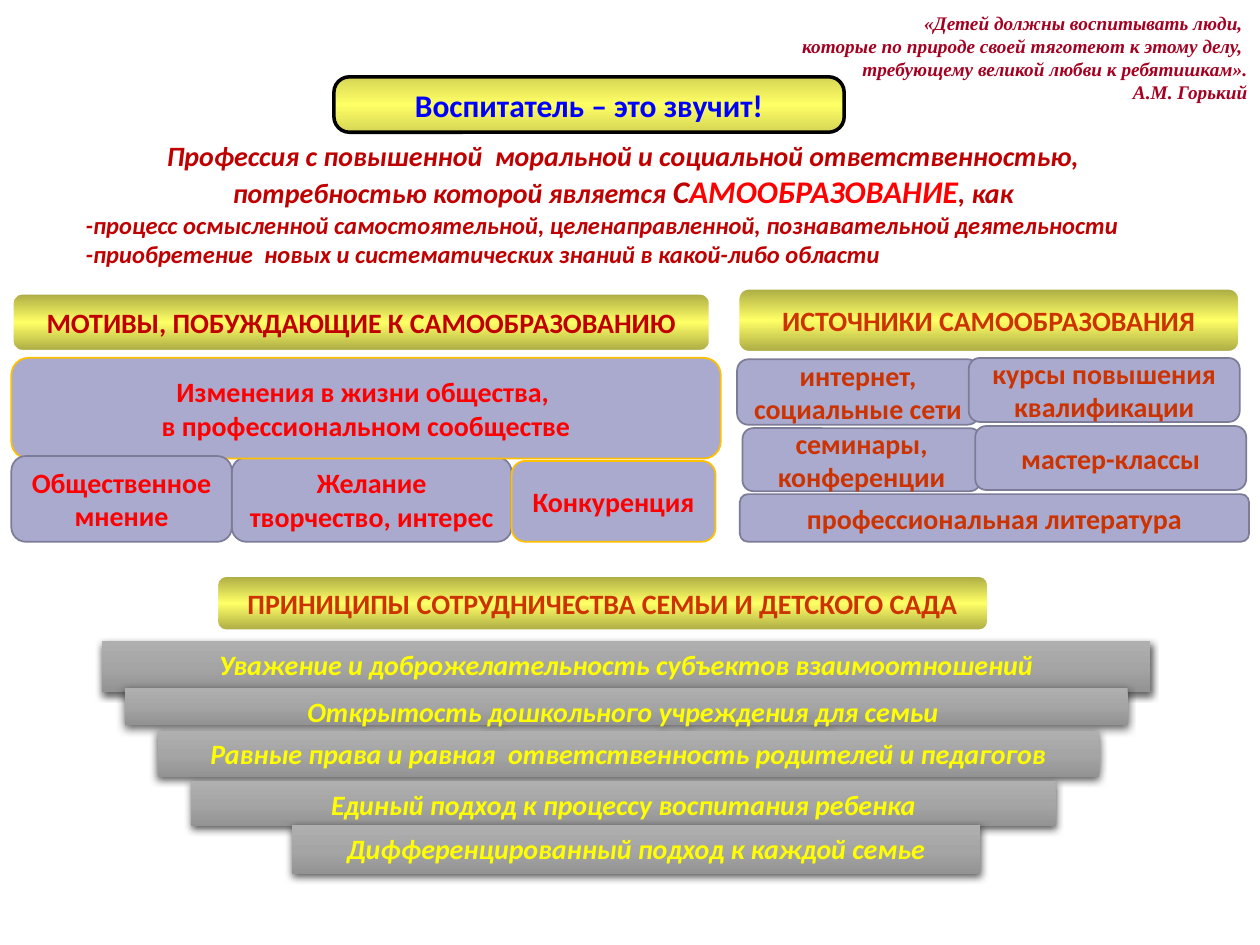
import copy
import dataclasses

import lxml.etree
import pptx
import pptx.dml.color
import pptx.enum.shapes
import pptx.enum.text
import pptx.oxml.ns
import pptx.util

Pt = pptx.util.Pt
Shape = pptx.enum.shapes.MSO_SHAPE
Align = pptx.enum.text.PP_ALIGN
Anchor = pptx.enum.text.MSO_ANCHOR
Fit = pptx.enum.text.MSO_AUTO_SIZE
qn = pptx.oxml.ns.qn


def rgb(code):
    return pptx.dml.color.RGBColor.from_string(code)


@dataclasses.dataclass(frozen=True)
class Theme:
    sans: str = "Calibri"
    serif: str = "Times New Roman"
    big: int = 18
    base: int = 16
    small: int = 14
    tiny: int = 11
    red: str = "FF0000"
    dark: str = "C00000"
    rust: str = "CC3300"
    wine: str = "A50021"
    blue: str = "0000FF"
    yellow: str = "FFFF00"
    black: str = "000000"
    white: str = "FFFFFF"
    lilac: str = "AAAACF"
    slate: str = "7C7C98"
    amber: str = "FFC000"
    gold: tuple = ("D5D555", "FFFF66", "D5D555")
    olive: tuple = ("A9A944", "FFFF66", "A9A944")
    grey: tuple = ("AFAFAF", "A5A5A5", "939393")


class Deck:
    def __init__(self, theme):
        self.theme = theme
        self.prs = pptx.Presentation()
        self.prs.slide_width, self.prs.slide_height = Pt(720), Pt(540)
        self.slide = self.prs.slides.add_slide(self.prs.slide_layouts[6])

    def run(self, para, text, color, size=None, font=None, italic=False):
        run = para.add_run()
        run.text = text
        face = run.font
        face.name = font or self.theme.sans
        face.size = Pt(size or self.theme.base)
        face.bold, face.italic = True, italic
        face.color.rgb = rgb(color)

    def lines(self, frame, rows, color, align=Align.CENTER, **style):
        """Write one paragraph for each row."""
        for i, row in enumerate(rows):
            para = frame.add_paragraph() if i else frame.paragraphs[0]
            para.alignment = align
            self.run(para, row, color, **style)

    def text(self, box):
        shape = self.slide.shapes.add_textbox(*map(Pt, box))
        shape.text_frame.word_wrap = True
        shape.text_frame.auto_size = Fit.SHAPE_TO_FIT_TEXT
        return shape.text_frame

    def blend(self, shape, colors):
        """Fill from top to bottom with evenly spaced colours."""
        fill = shape.fill
        fill.gradient()
        fill.gradient_angle = 270
        stops = next(shape.element.iter(qn("a:gsLst")))
        stops.insert(1, copy.deepcopy(stops[0]))
        for i, (stop, color) in enumerate(zip(fill.gradient_stops, colors)):
            stop.position = i / 2
            stop.color.rgb = rgb(color)

    def block(self, kind, box, adj, fill, edge=None, width=1):
        shape = self.slide.shapes.add_shape(kind, *map(Pt, box))
        shape.adjustments[0] = adj
        shape.shadow.inherit = False
        if isinstance(fill, tuple):
            self.blend(shape, fill)
        else:
            shape.fill.solid()
            shape.fill.fore_color.rgb = rgb(fill)
        if edge:
            shape.line.color.rgb = rgb(edge)
            shape.line.width = Pt(width)
        else:
            shape.line.fill.background()
        shape.text_frame.word_wrap = True
        return shape

    def head(self, box, text, color, before=0):
        shape = self.block(Shape.ROUNDED_RECTANGLE, box, 0.17,
                           self.theme.olive, self.theme.white, 2)
        self.lines(shape.text_frame, [text], color)
        shape.text_frame.paragraphs[0].space_before = Pt(before)

    def card(self, box, rows, color, edge=None):
        shape = self.block(Shape.ROUNDED_RECTANGLE, box, 0.17,
                           self.theme.lilac, edge or self.theme.slate)
        self.lines(shape.text_frame, rows, color)

    def title(self, box, text):
        shape = self.block(Shape.ROUNDED_RECTANGLE, box, 0.28,
                           self.theme.gold, self.theme.black, 2)
        self.lines(shape.text_frame, [text], self.theme.blue, size=self.theme.big)

    def bar(self, box, text, adj=0):
        shape = self.block(Shape.PENTAGON, box, adj, self.theme.grey)
        self.shade(shape)
        shape.text_frame.vertical_anchor = Anchor.TOP
        self.lines(shape.text_frame, [text], self.theme.yellow, italic=True)

    def shade(self, shape):
        """Drop a soft shadow straight below the shape."""
        effects = next(shape.element.iter(qn("a:effectLst")))
        outer = lxml.etree.SubElement(
            effects, qn("a:outerShdw"), blurRad=str(Pt(4.5)), dist=str(Pt(1.5)),
            dir="5400000", algn="ctr", rotWithShape="0")
        color = lxml.etree.SubElement(outer, qn("a:srgbClr"), val=self.theme.black)
        lxml.etree.SubElement(color, qn("a:alpha"), val="63000")

    def intro(self, box):
        look = self.theme
        frame = self.text(box)
        self.lines(frame, ["Профессия с повышенной  моральной и социальной ответственностью, ",
                           "потребностью которой является "], look.dark, italic=True)
        need = frame.paragraphs[1]
        self.run(need, "С", look.dark, look.big, italic=True)
        self.run(need, "АМООБРАЗОВАНИЕ", look.red, look.big, italic=True)
        self.run(need, ", как ", look.dark, italic=True)
        goals = frame.add_paragraph()
        self.run(goals, "-процесс осмысленной самостоятельной, целенаправленной, "
                 "познавательной деятельности", look.dark, look.small, italic=True)
        goals.add_line_break()
        self.run(goals, "-приобретение  новых и систематических знаний в какой-либо области",
                 look.dark, look.small, italic=True)


def main():
    look = Theme()
    deck = Deck(look)
    deck.title((190.8, 43.9, 291.6, 31.7), "Воспитатель – это звучит!")
    deck.intro((41.8, 75.6, 632.2, 97.9))

    deck.head((6.8, 167.4, 399.2, 33.5), "МОТИВЫ, ПОБУЖДАЮЩИЕ К САМООБРАЗОВАНИЮ",
              look.dark, 6)
    deck.head((123.6, 328.7, 441.5, 32), "ПРИНИЦИПЫ СОТРУДНИЧЕСТВА СЕМЬИ И ДЕТСКОГО САДА",
              look.rust)
    deck.head((421.5, 164.5, 287, 37), "ИСТОЧНИКИ САМООБРАЗОВАНИЯ", look.rust, 6)

    motives = [
        ((132.5, 261.4, 159.8, 48.2), ["Желание творчество, интерес"], look.slate),
        ((6.5, 204.5, 405.4, 57.6),
         ["Изменения в жизни общества, ", "в профессиональном сообществе"], look.amber),
        ((292.3, 263.4, 116.6, 46.2), ["Конкуренция"], look.amber),
        ((6.5, 260.6, 126, 49), ["Общественное мнение"], look.slate),
    ]
    for box, rows, edge in motives:
        deck.card(box, rows, look.red, edge)

    sources = [
        ((421.2, 205.3, 138.2, 37.4), ["интернет,", "социальные сети"]),
        ((424.3, 244.7, 136.1, 36), ["семинары,", "конференции"]),
        ((557.3, 243.5, 154.8, 36.5), ["мастер-классы"]),
        ((553.6, 204.6, 154.8, 36.5), ["курсы повышения", "квалификации"]),
        ((422.8, 282.4, 291, 27.2), ["профессиональная литература"]),
    ]
    for box, rows in sources:
        deck.card(box, rows, look.rust)

    deck.lines(deck.text((434.2, 2.9, 285.8, 60.5)), [
        "«Детей должны воспитывать люди, ",
        "которые по природе своей тяготеют к этому делу, ",
        "требующему великой любви к ребятишкам».",
        "А.М. Горький",
    ], look.wine, Align.RIGHT, size=look.tiny, font=look.serif, italic=True)

    rules = [
        ((58.3, 366.5, 599, 28.8), "Уважение и доброжелательность субъектов взаимоотношений"),
        ((71.3, 393.1, 573.1, 20.9), "Открытость дошкольного учреждения для семьи "),
        ((90, 417.6, 538.6, 26.6),
         "Равные права и равная  ответственность родителей и педагогов", 0.03),
        ((109.4, 446.4, 493.9, 25.9), "Единый подход к процессу воспитания ребенка"),
        ((167, 471.6, 393.1, 28.1), "Дифференцированный подход к каждой семье"),
    ]
    for rule in rules:
        deck.bar(*rule)

    deck.prs.save("out.pptx")


if __name__ == "__main__":
    main()
